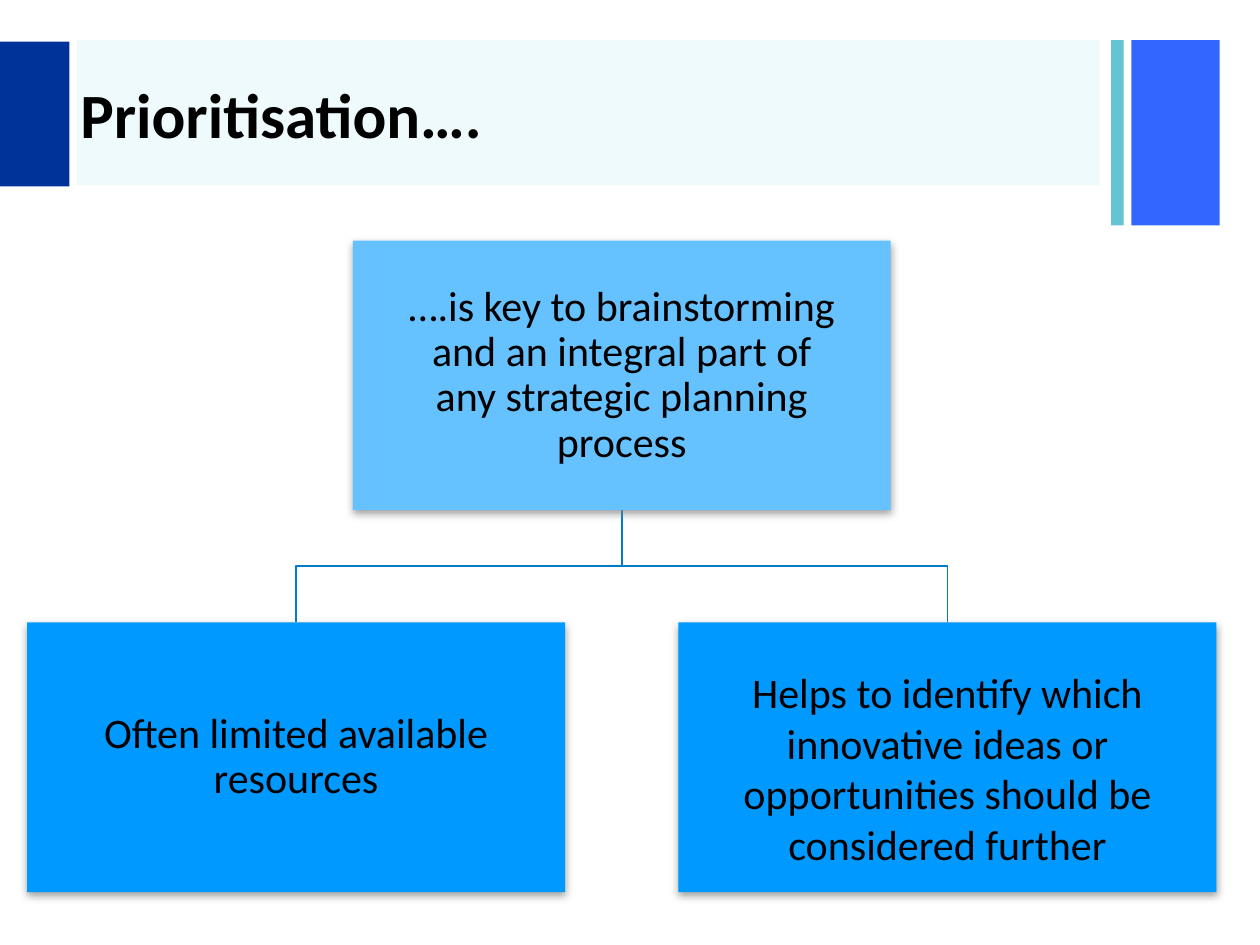
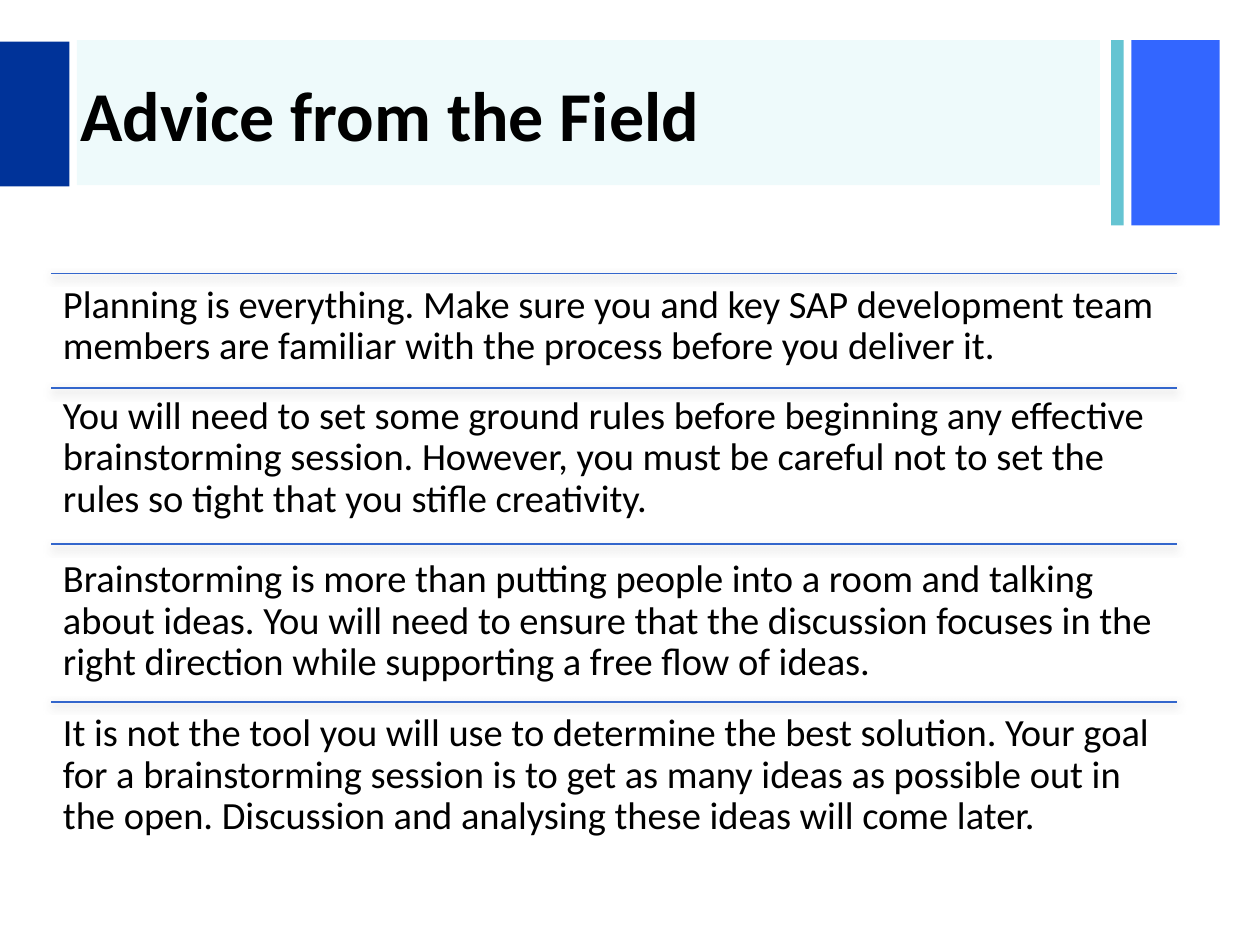
from lxml import etree
from pptx import Presentation
from pptx.dml import color
from pptx.enum import shapes, text
from pptx.oxml import ns
from pptx.util import Pt

BANDS = [
    ((646.56, 23, 50.4, 105.8), "3366FF", 100),
    ((635, 23, 7.2, 105.8), "65C4D2", 100),
    ((43.92, 23, 584.64, 82.8), "14C5D0", 7),
    ((0, 23.76, 39.6, 82.8), "003399", 100),
]
TITLE_BOX = (38.88, 24.5, 595.44, 80.64)
CARD_WIDTH, CARD_HEIGHT = 307.44, 154.08
ROOT_LEFT, ROOT_TOP = 201.6, 137.5
CHILD_TOP = 355.7
CHILD_OFFSET = 186.12
ADVICE_LEFT, ADVICE_WIDTH, ADVICE_HEIGHT = 29.4, 643, 81.4

ADVICE = [
    (156.24, 156.24, "Planning is everything. Make sure you and key SAP development team "
     "members are familiar with the process before you deliver it."),
    (221.76, 219.6, "You will need to set some ground rules before beginning any effective "
     "brainstorming session. However, you must be careful not to set the rules so tight "
     "that you stifle creativity."),
    (311.04, 313.2, "Brainstorming is more than putting people into a room and talking about "
     "ideas. You will need to ensure that the discussion focuses in the right direction "
     "while supporting a free flow of ideas."),
    (401.04, 401.04, "It is not the tool you will use to determine the best solution. Your goal "
     "for a brainstorming session is to get as many ideas as possible out in the open. "
     "Discussion and analysing these ideas will come later."),
]


def rgb(value):
    return color.RGBColor.from_string(value)


def points(values):
    return [Pt(value) for value in values]


def set_all(target, values):
    for name, value in values.items():
        setattr(target, name, value)


def add_xml(parent, tag, **attributes):
    return etree.SubElement(parent, ns.qn(tag), attributes)


class Deck:
    font = {"name": "Calibri", "bold": False}
    text_color = "000000"

    def __init__(self):
        self.presentation = Presentation()
        set_all(self.presentation, {"slide_width": Pt(720), "slide_height": Pt(540)})
        self.slide = None

    def new_slide(self, title, size):
        layout = self.presentation.slide_layouts[6]
        self.slide = self.presentation.slides.add_slide(layout)
        for box, fill, opacity in BANDS:
            self.rectangle(box, fill, opacity)
        self.textbox(TITLE_BOX, title, size, bold=True, insets=(7.2, 3.6, 7.2, 3.6),
                     anchor=text.MSO_ANCHOR.MIDDLE, spacing=1.0)

    def effects(self, shape, shadow=False):
        effect_list = add_xml(shape._element.spPr, "a:effectLst")
        if shadow:
            outer = add_xml(effect_list, "a:outerShdw", blurRad=str(Pt(5)), dist=str(Pt(2)),
                            dir="5400000", rotWithShape="0")
            tint = add_xml(outer, "a:srgbClr", val="808080")
            add_xml(tint, "a:alpha", val="75000")

    def rectangle(self, box, fill, opacity=100, shadow=False):
        shape = self.slide.shapes.add_shape(shapes.MSO_SHAPE.RECTANGLE, *points(box))
        shape.fill.solid()
        shape.fill.fore_color.rgb = rgb(fill)
        shape.line.fill.background()
        if opacity < 100:
            tint = shape._element.spPr.find(".//" + ns.qn("a:srgbClr"))
            add_xml(tint, "a:alpha", val=str(opacity * 1000))
        self.effects(shape, shadow)
        return shape

    def put_text(self, shape, content, size, bold=False, insets=(0, 0, 0, 0),
                 anchor=text.MSO_ANCHOR.TOP, align=text.PP_ALIGN.LEFT, spacing=0.9):
        frame = shape.text_frame
        sides = ("margin_left", "margin_top", "margin_right", "margin_bottom")
        set_all(frame, dict(zip(sides, points(insets))))
        set_all(frame, {"word_wrap": True, "vertical_anchor": anchor})
        paragraph = frame.paragraphs[0]
        paragraph.text = content
        set_all(paragraph, {"alignment": align, "line_spacing": spacing})
        for run in paragraph.runs:
            set_all(run.font, {**self.font, "size": Pt(size), "bold": bold})
            run.font.color.rgb = rgb(self.text_color)

    def textbox(self, box, content, size, **style):
        self.put_text(self.slide.shapes.add_textbox(*points(box)), content, size, **style)

    def card(self, left, top, fill, content, insets, spacing=0.9):
        shape = self.rectangle((left, top, CARD_WIDTH, CARD_HEIGHT), fill, shadow=True)
        self.put_text(shape, content, 24, insets=insets, spacing=spacing,
                      anchor=text.MSO_ANCHOR.MIDDLE, align=text.PP_ALIGN.CENTER)

    def elbow(self, start, end, line_color):
        middle = (start[1] + end[1]) / 2
        builder = self.slide.shapes.build_freeform(*points(start))
        corners = [(start[0], middle), (end[0], middle), end]
        builder.add_line_segments([points(corner) for corner in corners], close=False)
        shape = builder.convert_to_shape()
        shape.fill.background()
        self.stroke(shape, line_color)
        self.effects(shape)

    def rule(self, left, top, width, line_color):
        connector = self.slide.shapes.add_connector(
            shapes.MSO_CONNECTOR.STRAIGHT, *points((left, top, left + width, top)))
        self.stroke(connector, line_color)
        self.effects(connector, shadow=True)

    def stroke(self, shape, line_color):
        shape.line.color.rgb = rgb(line_color)
        shape.line.width = Pt(1)


def prioritisation(deck):
    deck.new_slide("Prioritisation….", 36)
    center = ROOT_LEFT + CARD_WIDTH / 2
    for offset in (CHILD_OFFSET, -CHILD_OFFSET):
        deck.elbow((center, ROOT_TOP + CARD_HEIGHT), (center + offset, CHILD_TOP), "007BCC")
    deck.card(ROOT_LEFT, ROOT_TOP, "66C2FF",
              "….is key to brainstorming\vand an integral part of\v"
              "any strategic planning process", (8.64, 1.44, 8.64, 1.44))
    deck.card(ROOT_LEFT - CHILD_OFFSET, CHILD_TOP, "0099FF",
              "Often limited available resources", (1.44, 1.44, 1.44, 1.44))
    deck.card(ROOT_LEFT + CHILD_OFFSET, CHILD_TOP, "0099FF",
              "Helps to identify which innovative ideas or opportunities "
              "should be considered further", (24, 13.44, 24, 1.44), spacing=1.0)


def advice(deck):
    deck.new_slide("Advice from the Field", 40)
    for rule_top, text_top, content in ADVICE:
        deck.rule(ADVICE_LEFT, rule_top, ADVICE_WIDTH, "3366CC")
        deck.textbox((ADVICE_LEFT, text_top, ADVICE_WIDTH, ADVICE_HEIGHT), content, 22,
                     insets=(6.6, 6.6, 6.6, 6.6))


def main():
    deck = Deck()
    prioritisation(deck)
    advice(deck)
    deck.presentation.save("out.pptx")


if __name__ == "__main__":
    main()
